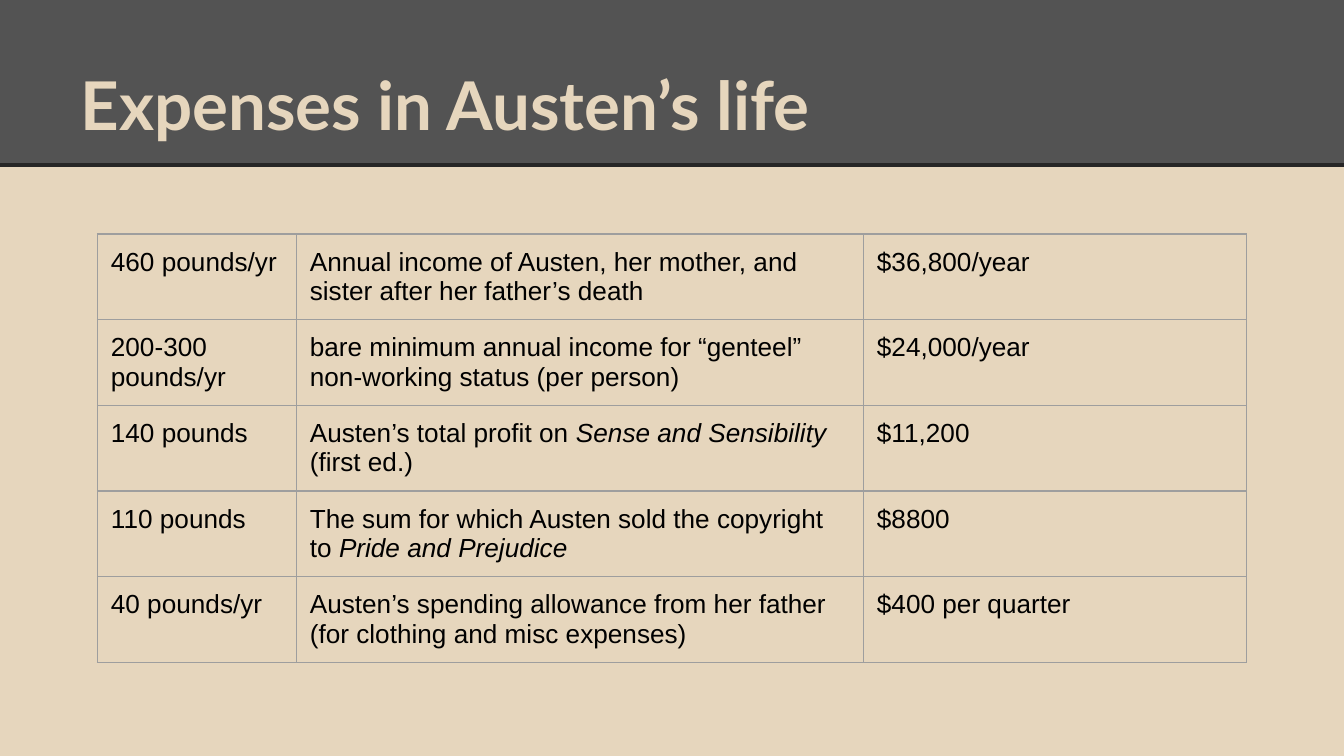
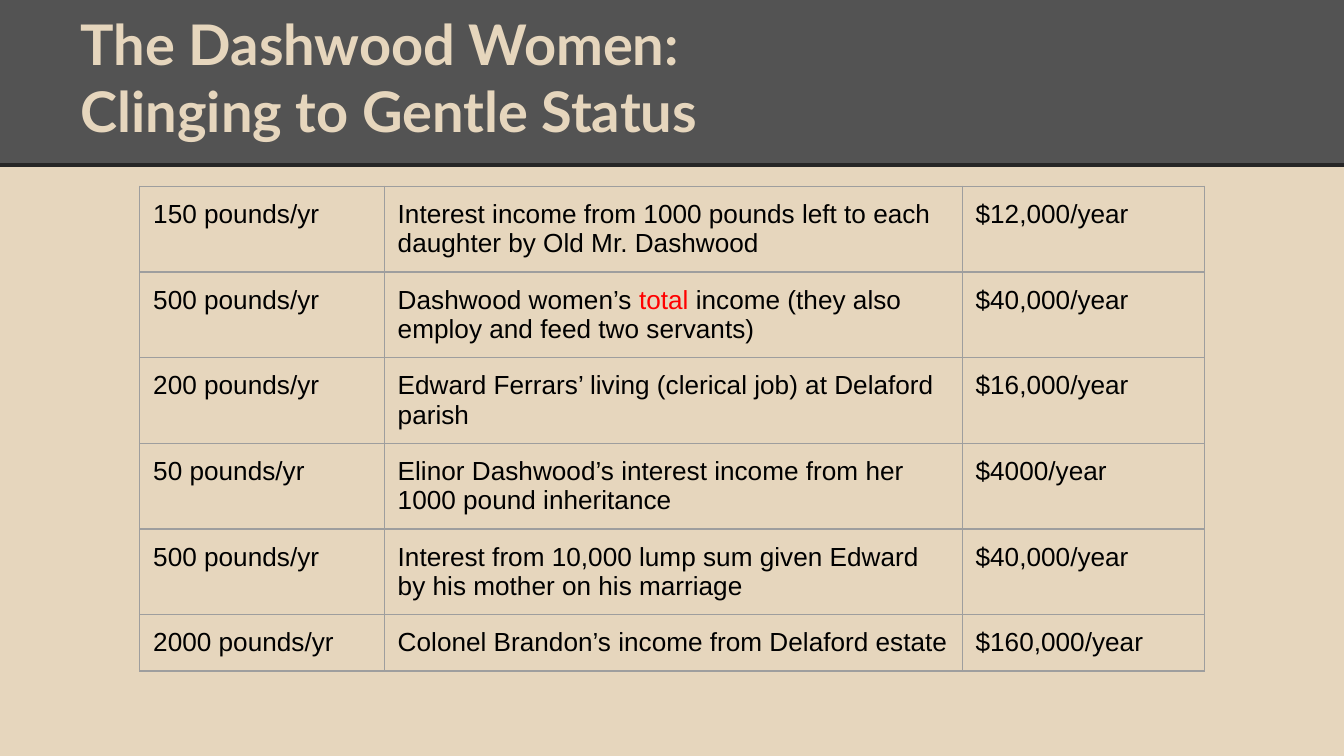
from pptx import Presentation
from pptx.dml.color import RGBColor
from pptx.enum.shapes import MSO_CONNECTOR as LINK, MSO_SHAPE as SHAPE
from pptx.enum.text import MSO_ANCHOR as ANCHOR, MSO_AUTO_SIZE as FIT, PP_ALIGN as ALIGN
from pptx.oxml import parse_xml
from pptx.oxml.ns import nsdecls
from pptx.util import Pt

SAND = RGBColor(0xE6, 0xD6, 0xBD)
SLATE = RGBColor(0x53, 0x53, 0x53)
COAL = RGBColor(0x26, 0x26, 0x26)
GREY = RGBColor(0x9E, 0x9E, 0x9E)
BLACK = RGBColor(0, 0, 0)
RED = RGBColor(0xFF, 0, 0)

WIDE, HIGH = 720, 405
BAND = (0, 0, WIDE, 88.5)
HEAD = (36, 16.5, 648, 67.7)
INSET = 7.2

ITALIC = {"italic": True}
ALERT = {"color": RED}

LIFE = [
    ("460 pounds/yr",
     "Annual income of Austen, her mother, and sister after her father’s death",
     "$36,800/year"),
    ("200-300 pounds/yr",
     "bare minimum annual income for “genteel” non-working status (per person)",
     "$24,000/year"),
    ("140 pounds",
     ["Austen’s total profit on ", ("Sense and Sensibility", ITALIC), " (first ed.)"],
     "$11,200"),
    ("110 pounds",
     ["The sum for which Austen sold the copyright to ", ("Pride and Prejudice", ITALIC)],
     "$8800"),
    ("40 pounds/yr",
     "Austen’s spending allowance from her father (for clothing and misc expenses)",
     "$400 per quarter"),
]

WOMEN = [
    ("150 pounds/yr",
     "Interest income from 1000 pounds left to each daughter by Old Mr. Dashwood",
     "$12,000/year"),
    ("500 pounds/yr",
     ["Dashwood women’s ", ("total", ALERT), " income (they also employ and feed two servants)"],
     "$40,000/year"),
    ("200 pounds/yr",
     "Edward Ferrars’ living (clerical job) at Delaford parish",
     "$16,000/year"),
    ("50 pounds/yr",
     "Elinor Dashwood’s interest income from her 1000 pound inheritance",
     "$4000/year"),
    ("500 pounds/yr",
     "Interest from 10,000 lump sum given Edward by his mother on his marriage",
     "$40,000/year"),
    ("2000 pounds/yr",
     "Colonel Brandon’s income from Delaford estate",
     "$160,000/year"),
]


def write(frame, *lines, size=14, name="Arial", color=BLACK, bold=False):
    """Fill a text frame with lines, each a string or a list of runs."""
    for i, line in enumerate(lines):
        para = frame.paragraphs[0] if i == 0 else frame.add_paragraph()
        para.alignment = ALIGN.LEFT
        for part in [line] if isinstance(line, str) else line:
            text, extra = (part, {}) if isinstance(part, str) else part
            run = para.add_run()
            run.text = text
            font = run.font
            font.size, font.name, font.bold = Pt(size), name, bold
            font.italic = extra.get("italic", False)
            font.color.rgb = extra.get("color", color)


def pad(item):
    """Give a cell or text frame the common inset on all sides."""
    item.margin_left = item.margin_right = Pt(INSET)
    item.margin_top = item.margin_bottom = Pt(INSET)


def add_band(slide, box):
    """Draw the header band and its rule, and move them to the shared layout."""
    x, y, w, h = box
    band = slide.shapes.add_shape(SHAPE.RECTANGLE, Pt(x), Pt(y), Pt(w), Pt(h))
    band.shadow.inherit = False
    band.fill.solid()
    band.fill.fore_color.rgb = SLATE
    band.line.fill.background()
    rule = slide.shapes.add_connector(LINK.STRAIGHT, Pt(x), Pt(y + h), Pt(x + w), Pt(y + h))
    rule.line.color.rgb = COAL
    rule.line.width = Pt(2.25)
    rule._element.spPr.append(parse_xml(f"<a:effectLst {nsdecls('a')}/>"))
    tree = slide.slide_layout.shapes._spTree
    for i, part in enumerate((band, rule)):
        tree.insert(2 + i, part._element)


def add_title(slide, box, lines, size):
    """Place and format the title placeholder."""
    title = slide.shapes.title
    title.left, title.top, title.width, title.height = map(Pt, box)
    frame = title.text_frame
    frame.word_wrap = True
    frame.auto_size = FIT.NONE
    frame.vertical_anchor = ANCHOR.BOTTOM
    pad(frame)
    write(frame, *lines, size=size, name="Lato", color=SAND, bold=True)


def edge(cell):
    """Draw a thin grey border on all sides of a cell."""
    props = cell._tc.get_or_add_tcPr()
    for i, side in enumerate("LRTB"):
        props.insert(i, parse_xml(
            f'<a:ln{side} {nsdecls("a")} w="{Pt(0.75)}"><a:solidFill>'
            f'<a:srgbClr val="{GREY}"/></a:solidFill></a:ln{side}>'))


def add_grid(slide, box, rows, cols, tall):
    """Add a table of rows with the given column widths and row height."""
    shape = slide.shapes.add_table(len(rows), len(cols), *map(Pt, box))
    table = shape.table
    table.first_row = table.horz_banding = False
    for col, width in zip(table.columns, cols):
        col.width = Pt(width)
    for r, row in enumerate(rows):
        table.rows[r].height = Pt(tall)
        for c, text in enumerate(row):
            cell = table.cell(r, c)
            cell.fill.background()
            edge(cell)
            pad(cell)
            write(cell.text_frame, text)
    shape.height = Pt(box[3])


def main():
    """Build and save the deck."""
    deck = Presentation()
    deck.slide_width, deck.slide_height = Pt(WIDE), Pt(HIGH)
    back = deck.slide_master.background.fill
    back.solid()
    back.fore_color.rgb = SAND
    layout = deck.slide_layouts[5]

    life = deck.slides.add_slide(layout)
    add_band(life, BAND)
    add_title(life, HEAD, ["Expenses in Austen’s life"], 36)
    add_grid(life, (52.2, 125.4, 615.6, 239.8), LIFE, (106.6, 303.8, 205.2), 38.1)

    women = deck.slides.add_slide(layout)
    add_title(women, HEAD, ["The Dashwood Women:", "Clinging to Gentle Status"], 30)
    add_grid(women, (74.9, 99.8, 570.2, 271.4), WOMEN, (131, 309.6, 129.6), 30)

    deck.save("out.pptx")


if __name__ == "__main__":
    main()
